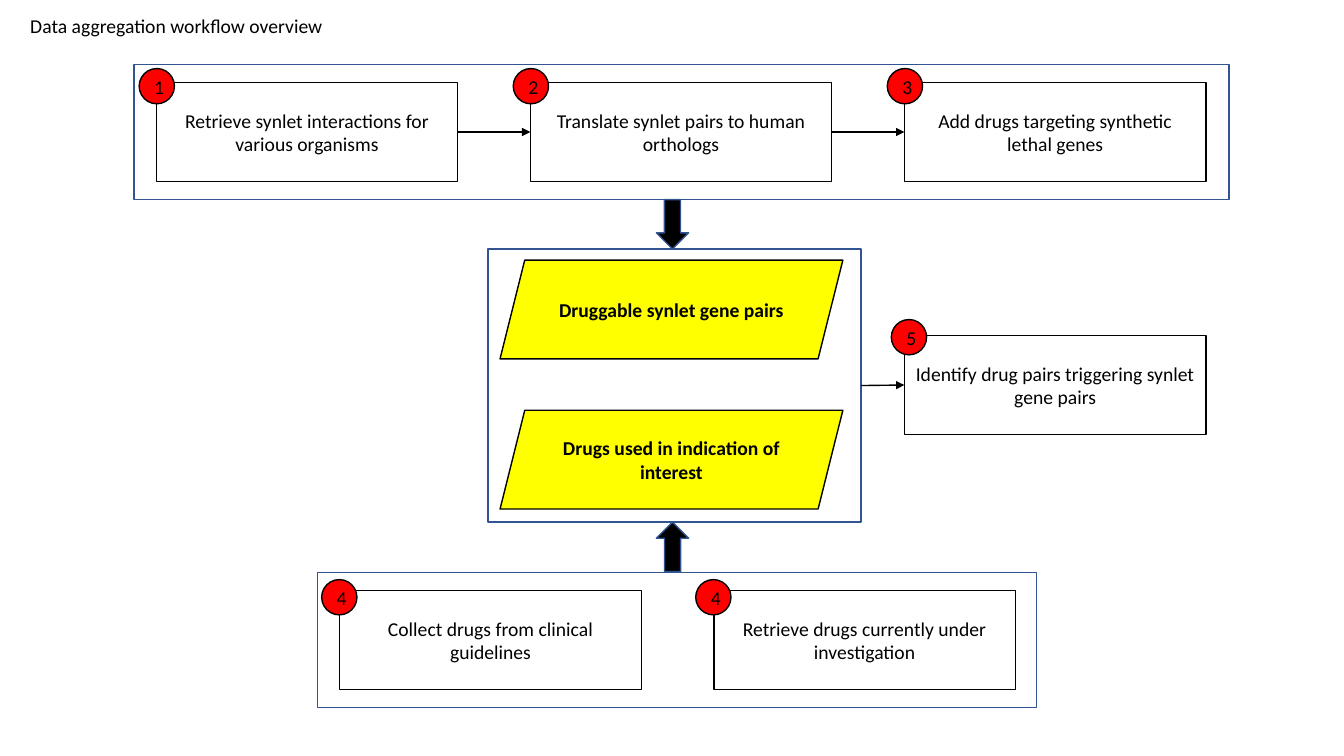
from dataclasses import dataclass

from lxml.etree import SubElement
from pptx import Presentation
from pptx.dml.color import RGBColor
from pptx.enum.shapes import MSO_CONNECTOR, MSO_SHAPE
from pptx.enum.text import MSO_ANCHOR, MSO_AUTO_SIZE, PP_ALIGN
from pptx.oxml.ns import qn
from pptx.util import Inches, Pt


@dataclass(frozen=True)
class Theme:
    ink: RGBColor = RGBColor(0x00, 0x00, 0x00)
    frame: RGBColor = RGBColor(0x32, 0x54, 0x91)
    badge: RGBColor = RGBColor(0xFF, 0x00, 0x00)
    data: RGBColor = RGBColor(0xFF, 0xFF, 0x00)
    font: str = "Calibri"
    text_size: Pt = Pt(14)
    line_width: Pt = Pt(1)


@dataclass(frozen=True)
class Box:
    left: float
    top: float
    width: float
    height: float

    def inches(self):
        return [Inches(n) for n in (self.left, self.top, self.width, self.height)]

    def inner(self, dx, dy, width, height):
        return Box(self.left + dx, self.top + dy, width, height)


THEME = Theme()
STEP_SIZE = (2.99, 0.98)
STEP_PITCH = 3.71
BADGE_SIZE = 0.35
DATA_SIZE = (3.4, 0.98)
DATA_PITCH = 1.49


def add_text(frame, text, bold=False, align=PP_ALIGN.CENTER):
    paragraph = frame.paragraphs[0]
    paragraph.alignment = align
    run = paragraph.add_run()
    run.text = text
    run.font.name = THEME.font
    run.font.size = THEME.text_size
    run.font.bold = bold
    run.font.color.rgb = THEME.ink


def add_figure(slide, kind, box, fill=None, line=THEME.ink, text="", bold=False):
    figure = slide.shapes.add_shape(kind, *box.inches())
    figure.shadow.inherit = False
    if fill is None:
        figure.fill.background()
    else:
        figure.fill.solid()
        figure.fill.fore_color.rgb = fill
    figure.line.color.rgb = line
    figure.line.width = THEME.line_width
    if text:
        figure.text_frame.word_wrap = True
        figure.text_frame.vertical_anchor = MSO_ANCHOR.MIDDLE
        add_text(figure.text_frame, text, bold)
    return figure


def add_flow(slide, source, target):
    flow = slide.shapes.add_connector(MSO_CONNECTOR.STRAIGHT, 0, 0, 0, 0)
    flow.begin_connect(source, 3)
    flow.end_connect(target, 1)
    flow.line.color.rgb = THEME.ink
    flow.line.width = THEME.line_width
    SubElement(flow.line._get_or_add_ln(), qn("a:tailEnd"), type="triangle")
    SubElement(flow._element.spPr, qn("a:effectLst"))


def add_title(slide, box, text):
    title = slide.shapes.title
    title.left, title.top, title.width, title.height = box.inches()
    frame = title.text_frame
    frame.word_wrap = False
    frame.auto_size = MSO_AUTO_SIZE.SHAPE_TO_FIT_TEXT
    frame.vertical_anchor = MSO_ANCHOR.TOP
    add_text(frame, text, align=PP_ALIGN.LEFT)


def add_step(slide, box, number, text, badge_offset):
    step = add_figure(slide, MSO_SHAPE.RECTANGLE, box, text=text)
    badge_box = box.inner(*badge_offset, BADGE_SIZE, BADGE_SIZE)
    add_figure(slide, MSO_SHAPE.OVAL, badge_box, THEME.badge, text=number)
    return step


def add_step_panel(slide, box, steps, badge_offset):
    add_figure(slide, MSO_SHAPE.RECTANGLE, box, line=THEME.frame)
    return [
        add_step(slide, box.inner(0.22 + i * STEP_PITCH, 0.18, *STEP_SIZE),
                 number, text, badge_offset)
        for i, (number, text) in enumerate(steps)
    ]


def add_data_panel(slide, box, datasets):
    panel = add_figure(slide, MSO_SHAPE.RECTANGLE, box, line=THEME.frame)
    for i, text in enumerate(datasets):
        add_figure(slide, MSO_SHAPE.PARALLELOGRAM,
                   box.inner(0.12, 0.11 + i * DATA_PITCH, *DATA_SIZE),
                   THEME.data, text=text, bold=True)
    return panel


def add_feed(slide, box, rotation=0):
    feed = add_figure(slide, MSO_SHAPE.DOWN_ARROW, box, THEME.ink, THEME.frame)
    feed.rotation = rotation


def main():
    deck = Presentation()
    deck.slide_width, deck.slide_height = Inches(13.33), Inches(7.5)
    slide = deck.slides.add_slide(deck.slide_layouts[5])

    add_title(slide, Box(0.2, 0.09, 3.13, 0.34), "Data aggregation workflow overview")
    retrieve, translate, add_drugs = add_step_panel(
        slide, Box(1.33, 0.64, 10.86, 1.34),
        [("1", "Retrieve synlet interactions for various organisms"),
         ("2", "Translate synlet pairs to human orthologs"),
         ("3", "Add drugs targeting synthetic lethal genes")],
        (-0.17, -0.14))
    add_flow(slide, retrieve, translate)
    add_flow(slide, translate, add_drugs)

    add_step_panel(
        slide, Box(3.15, 5.68, 7.13, 1.34),
        [("4", "Collect drugs from clinical guidelines"),
         ("4", "Retrieve drugs currently under investigation")],
        (-0.18, -0.11))

    data_box = Box(4.84, 2.47, 3.7, 2.71)
    data_panel = add_data_panel(
        slide, data_box,
        ["Druggable synlet gene pairs", "Drugs used in indication of interest"])
    add_feed(slide, data_box.inner(1.67, -0.49, 0.32, 0.49))
    add_feed(slide, data_box.inner(1.67, data_box.height, 0.32, 0.49), 180)

    identify = add_step(
        slide, Box(8.97, 3.33, *STEP_SIZE), "5",
        "Identify drug pairs triggering synlet gene pairs", (-0.13, -0.16))
    add_flow(slide, data_panel, identify)

    deck.save("out.pptx")


if __name__ == "__main__":
    main()
